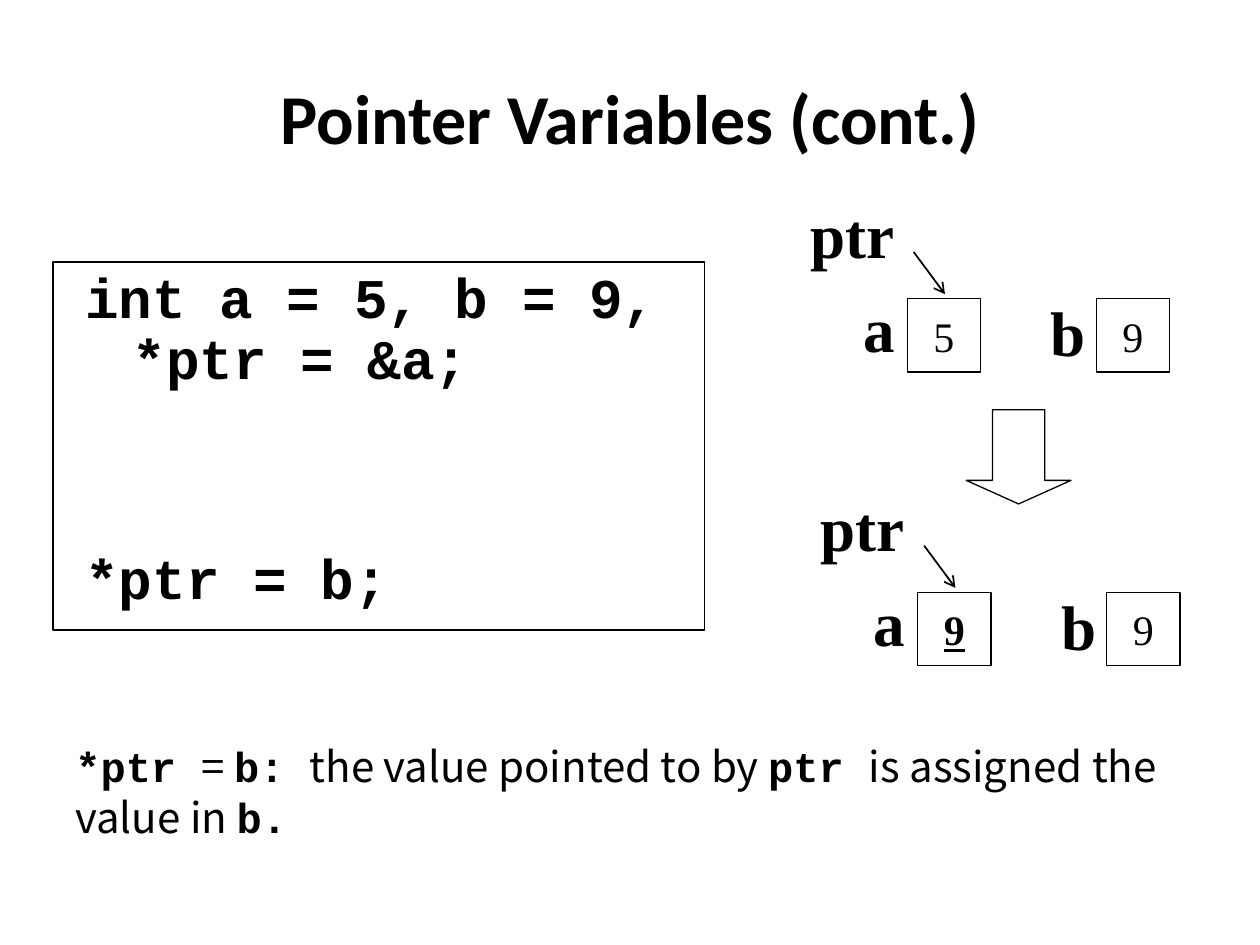
from dataclasses import dataclass

from lxml.etree import SubElement
from pptx import Presentation
from pptx.dml.color import RGBColor as Color
from pptx.enum.shapes import MSO_CONNECTOR as Link, MSO_SHAPE as Kind
from pptx.enum.text import (
    MSO_ANCHOR as Anchor, MSO_AUTO_SIZE as Fit, PP_ALIGN as Align)
from pptx.oxml.ns import qn
from pptx.util import Cm, Pt


@dataclass(frozen=True)
class Theme:
    ink: Color = Color(0, 0, 0)
    head: str = "Calibri"
    code: str = "Courier New"
    body: str = "Noto Sans CJK KR"
    serif: str = "Times New Roman"
    title: int = 40
    label: int = 36
    source: int = 32
    text: int = 24
    thin: float = 0.75
    line: float = 1


THEME = Theme()


def add_run(para, text, font, size, bold=False, under=False):
    run = para.add_run()
    run.text = text
    face = run.font
    face.name, face.size, face.bold = font, Pt(size), bold
    face.color.rgb = THEME.ink
    if under:
        face.underline = True


def add_title(slide, text):
    title = slide.shapes.title
    title.left, title.top = Cm(1.27), Cm(0.76)
    title.width, title.height = Cm(22.86), Cm(3.18)
    title.text_frame.vertical_anchor = Anchor.MIDDLE
    para = title.text_frame.paragraphs[0]
    para.alignment = Align.CENTER
    add_run(para, text, THEME.head, THEME.title, bold=True)


def add_text(shapes, x, y, wide, high, wrap=True, fit=Fit.SHAPE_TO_FIT_TEXT):
    box = shapes.add_textbox(Cm(x), Cm(y), Cm(wide), Cm(high))
    frame = box.text_frame
    frame.word_wrap, frame.auto_size = wrap, fit
    return frame


def add_shape(shapes, kind, x, y, wide, high):
    shape = shapes.add_shape(kind, Cm(x), Cm(y), Cm(wide), Cm(high))
    shape.shadow.inherit = False
    shape.fill.background()
    shape.line.color.rgb = THEME.ink
    shape.line.width = Pt(THEME.thin)
    return shape


def add_cell(shapes, x, y, value, new):
    frame = add_shape(shapes, Kind.RECTANGLE, x, y, 1.48, 1.48).text_frame
    frame.word_wrap, frame.vertical_anchor = False, Anchor.MIDDLE
    para = frame.paragraphs[0]
    para.alignment = Align.CENTER
    add_run(para, value, THEME.serif, THEME.text, bold=new, under=new)


def add_label(shapes, x, y, wide, text):
    frame = add_text(shapes, x, y, wide, 1.78, wrap=False)
    add_run(frame.paragraphs[0], text, THEME.serif, THEME.label, bold=True)


def add_arrow(shapes, x1, y1, x2, y2):
    arrow = shapes.add_connector(
        Link.STRAIGHT, Cm(x1), Cm(y1), Cm(x2), Cm(y2))
    arrow.line.color.rgb = THEME.ink
    arrow.line.width = Pt(THEME.line)
    SubElement(arrow.line._get_or_add_ln(), qn("a:tailEnd"), type="arrow")
    SubElement(arrow._element.spPr, qn("a:effectLst"))


def add_state(slide, x, y, a, b, new=False):
    """Draw ptr, a and b, with x and y at the corner of the ptr label."""
    shapes = slide.shapes.add_group_shape().shapes
    add_cell(shapes, x + 2.21, y + 2.21, a, new)
    add_cell(shapes, x + 6.02, y + 2.21, b, False)
    add_label(shapes, x + 1.07, y + 1.91, 1.14, "a")
    add_label(shapes, x + 4.85, y + 1.98, 1.22, "b")
    add_label(shapes, x, y, 2.21, "ptr")
    add_arrow(shapes, x + 2.34, y + 1.27, x + 2.97, y + 2.12)


def add_code(slide, lines, gap):
    frame = add_text(slide.shapes, 1.47, 5.33, 12.7, 7.14, fit=Fit.NONE)
    for i, line in enumerate(lines):
        para = frame.add_paragraph() if i else frame.paragraphs[0]
        props = para._p.get_or_add_pPr()
        props.set("marL", str(Cm(0.95)))
        props.set("indent", str(-Cm(0.95)))
        para.line_spacing = 0.9
        if i:
            para.space_before = Pt(gap)
        add_run(para, line, THEME.code, THEME.source, bold=True)


def add_note(slide, parts):
    para = add_text(slide.shapes, 1.27, 14.81, 22.86, 2.31).paragraphs[0]
    for i, part in enumerate(parts):
        code = i % 2 == 0  # code and prose take turns
        font = THEME.code if code else THEME.body
        add_run(para, part, font, THEME.text, bold=code)


def main():
    deck = Presentation()
    deck.slide_width, deck.slide_height = Cm(25.4), Cm(19.05)
    slide = deck.slides.add_slide(deck.slide_layouts[5])
    add_title(slide, "Pointer Variables (cont.)")

    # Code listing
    add_code(slide, ["int a = 5, b = 9, *ptr = &a;", "*ptr = b;"], gap=91)

    # Memory before and after the assignment
    add_state(slide, 16.08, 3.81, "5", "9")
    add_state(slide, 16.29, 9.73, "9", "9", new=True)
    down = add_shape(slide.shapes, Kind.DOWN_ARROW, 19.48, 8.26, 2.11, 1.9)
    down.adjustments[0], down.adjustments[1] = 0.5, 0.25

    # Frame around the code
    add_shape(slide.shapes, Kind.RECTANGLE, 1.07, 5.28, 13.13, 7.42)

    # Explanation
    add_note(slide, ["*ptr ", "= ", "b: ", "the value pointed to by ",
                     "ptr ", "is assigned the value in ", "b."])
    deck.save("out.pptx")


if __name__ == "__main__":
    main()
